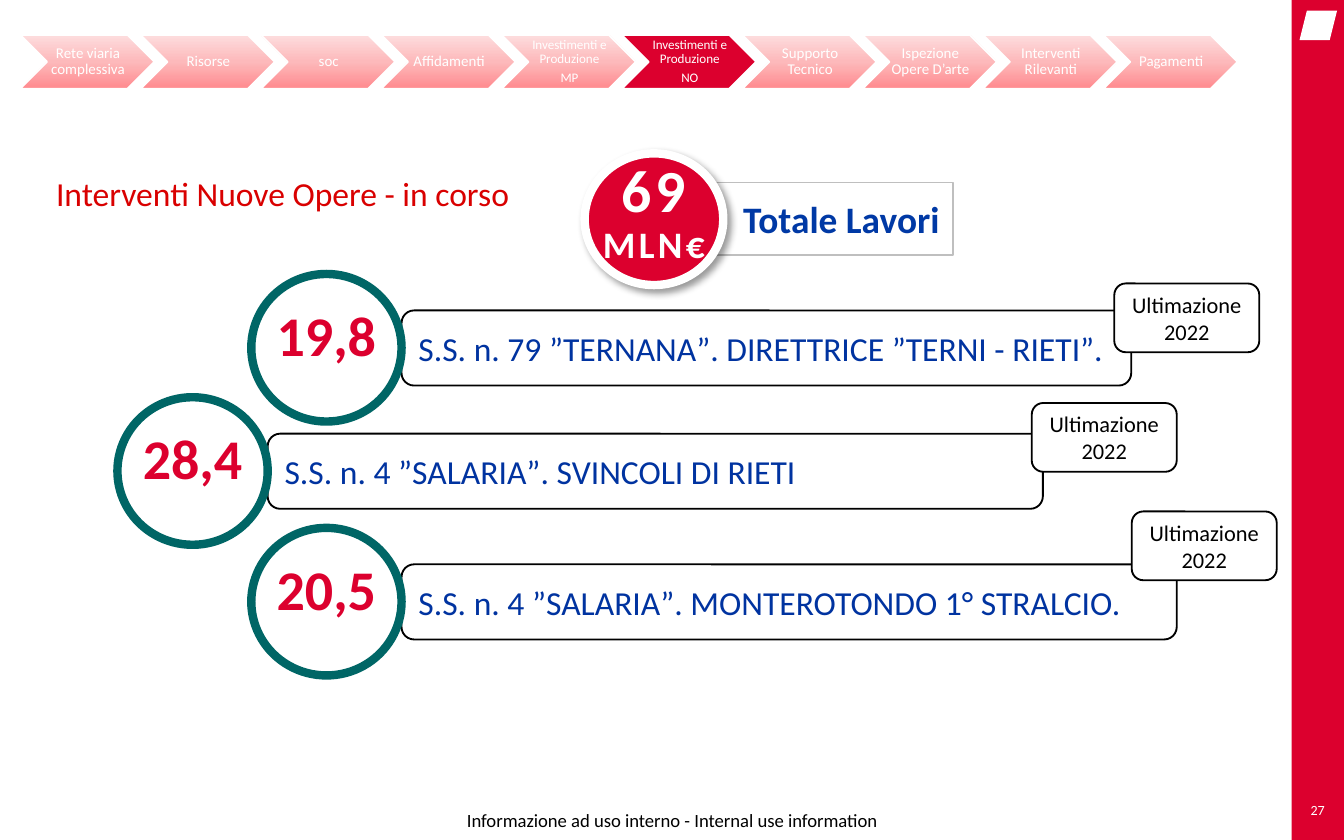
import dataclasses

import pptx
import pptx.dml.color
import pptx.enum.shapes
import pptx.enum.text
import pptx.oxml
import pptx.oxml.ns
import pptx.util
from copy import deepcopy

Cm = pptx.util.Cm
Pt = pptx.util.Pt
RGB = pptx.dml.color.RGBColor.from_string
SHAPE = pptx.enum.shapes.MSO_SHAPE
ALIGN = pptx.enum.text.PP_ALIGN
ANCHOR = pptx.enum.text.MSO_ANCHOR


@dataclasses.dataclass(frozen=True)
class Theme:
    font: str = "Calibri"
    white: str = "FFFFFF"
    black: str = "000000"
    red: str = "DC002E"
    title_red: str = "D90000"
    blue: str = "0033A0"
    total_blue: str = "0039A5"
    teal: str = "006666"
    grey: str = "BFBFBF"
    inactive: tuple = ("FF8A8E", "FDB9BB", "FDDDDE")
    total_size: float = 32
    amount_size: float = 30
    unit_size: float = 20
    body_size: float = 18
    badge_size: float = 12
    footer_size: float = 10
    step_size: float = 8
    small_step_size: float = 7
    page_size: float = 7.5


theme = Theme()
deck = pptx.Presentation()
deck.slide_width, deck.slide_height = Cm(25.4), Cm(15.88)
slide = deck.slides.add_slide(deck.slide_layouts[6])


def add_box(kind, left, top, width, height, fill=None, line=None, line_width=1):
    """Add a preset shape, or a text box when kind is None; lengths in cm."""
    place = Cm(left), Cm(top), Cm(width), Cm(height)
    if kind is None:
        return slide.shapes.add_textbox(*place)
    shape = slide.shapes.add_shape(kind, *place)
    shape.shadow.inherit = False
    shape.fill.solid()
    shape.fill.fore_color.rgb = RGB(fill)
    if line:
        shape.line.color.rgb = RGB(line)
        shape.line.width = Pt(line_width)
    else:
        shape.line.fill.background()
    return shape


def write(shape, lines, size, color, bold=False, align=ALIGN.CENTER,
          anchor=ANCHOR.MIDDLE, insets=None, wrap=True, spacing=None, after=None):
    """Fill the shape with one paragraph per line; insets are left, top, right, bottom in cm."""
    frame = shape.text_frame
    frame.word_wrap = wrap
    frame.vertical_anchor = anchor
    if insets:
        (frame.margin_left, frame.margin_top,
         frame.margin_right, frame.margin_bottom) = map(Cm, insets)
    frame.text = "\n".join(lines)
    for paragraph in frame.paragraphs:
        paragraph.alignment = align
        paragraph.line_spacing = spacing
        paragraph.space_after = after
        for run in paragraph.runs:
            run.font.name = theme.font
            run.font.size = Pt(size)
            run.font.bold = bold
            run.font.color.rgb = RGB(color)


# Footer and side band
footer = add_box(None, 8.3, 15.14, 8.8, 0.74)
write(footer, ["Informazione ad uso interno - Internal use information"],
      theme.footer_size, theme.black, insets=(0, 0, 0, 0))
add_box(SHAPE.RECTANGLE, 24.41, 0, 0.99, 15.88, theme.red)
add_box(SHAPE.PARALLELOGRAM, 24.56, 0.2, 0.71, 0.56, theme.white)
page_number = add_box(None, 24.41, 15.04, 0.99, 0.53)
write(page_number, ["27"], theme.page_size, theme.white, insets=(0, 0, 0, 0), wrap=False)

# Total of the works
total_label = add_box(SHAPE.RECTANGLE, 11.56, 3.45, 6.45, 1.37, theme.white, theme.grey, 0.75)
write(total_label, ["Totale Lavori"], theme.unit_size, theme.total_blue, True, ALIGN.RIGHT)
total = add_box(SHAPE.OVAL, 11.05, 2.9, 2.62, 2.49, theme.red, theme.white, 4.5)
write(total, ["69", "MLN€"], theme.total_size, theme.white, True,
      insets=(0, 0.2, 0, 0), wrap=False, spacing=Pt(22))
total.text_frame.paragraphs[1].runs[0].font.size = Pt(theme.unit_size)
for paragraph in total.text_frame.paragraphs:
    paragraph.runs[0].font._element.set("spc", "180")
effects = total._element.spPr.find(pptx.oxml.ns.qn("a:effectLst"))
effects.append(pptx.oxml.parse_xml(
    f'<a:outerShdw {pptx.oxml.ns.nsdecls("a")} blurRad="{Pt(4)}" dist="{Pt(3)}" dir="2700000">'
    f'<a:srgbClr val="{theme.black}"><a:alpha val="40000"/></a:srgbClr></a:outerShdw>'))

title = add_box(None, 0.81, 3.15, 9.19, 1.02)
write(title, ["Interventi Nuove Opere - in corso"], theme.body_size, theme.title_red,
      align=ALIGN.LEFT, anchor=ANCHOR.TOP, wrap=False)

# Works: amount, description, bar left, bar top, bar width, badge left, badge top
works = [
    ("19,8", "S.S. n. 79 ˮTERNANAˮ. DIRETTRICE ˮTERNI - RIETIˮ.", 7.59, 5.87, 13.79, 21.06, 5.36),
    ("28,4", "S.S. n. 4 ˮSALARIAˮ. SVINCOLI DI RIETI", 5.06, 8.2, 14.65, 19.5, 7.62),
    ("20,5", "S.S. n. 4 ˮSALARIAˮ. MONTEROTONDO 1° STRALCIO.", 7.59, 10.67, 14.65, 21.39, 9.67),
]
for amount, description, left, top, width, badge_left, badge_top in works:
    bar = add_box(SHAPE.ROUNDED_RECTANGLE, left, top, width, 1.42, theme.white, theme.black)
    write(bar, [description], theme.body_size, theme.blue, align=ALIGN.LEFT)
    circle = add_box(SHAPE.OVAL, left - 2.84, top - 0.69, 2.84, 2.79,
                     theme.white, theme.teal, 4.5)
    write(circle, [amount], theme.amount_size, theme.red, True, anchor=ANCHOR.TOP,
          insets=(0, 0.84, 0, 0), spacing=Pt(15))
    badge = add_box(SHAPE.ROUNDED_RECTANGLE, badge_left, badge_top, 2.74, 1.3,
                    theme.white, theme.black)
    write(badge, ["Ultimazione 2022"], theme.badge_size, theme.black)

# Navigation steps
steps = [
    ["Rete viaria complessiva"], ["Risorse"], ["soc"], ["Affidamenti"],
    ["Investimenti e Produzione", "MP"], ["Investimenti e Produzione", "NO"],
    ["Supporto Tecnico"], ["Ispezione Opere D’arte"], ["Interventi Rilevanti"], ["Pagamenti"],
]
current_step = 5
step_pitch = (20.85 - 0.38) / (len(steps) - 1)
for index, lines in enumerate(steps):
    step = add_box(SHAPE.CHEVRON, 0.38 + index * step_pitch, 0.66, 2.54, 1.02,
                   theme.red, theme.white)
    if index != current_step:
        step.fill.gradient()
        step.fill.gradient_angle = 90
        stop_list = step._element.spPr.find(".//" + pptx.oxml.ns.qn("a:gsLst"))
        stop_list.insert(1, deepcopy(stop_list[0]))
        for stop, position, color in zip(step.fill.gradient_stops, (0, 0.5, 1), theme.inactive):
            stop.position = position
            stop.color.rgb = RGB(color)
    size = theme.small_step_size if len(lines) > 1 else theme.step_size
    write(step, lines, size, theme.white, insets=(0.03, 0.03, 0, 0.03),
          spacing=0.9, after=Pt(2.5))

deck.save("out.pptx")
